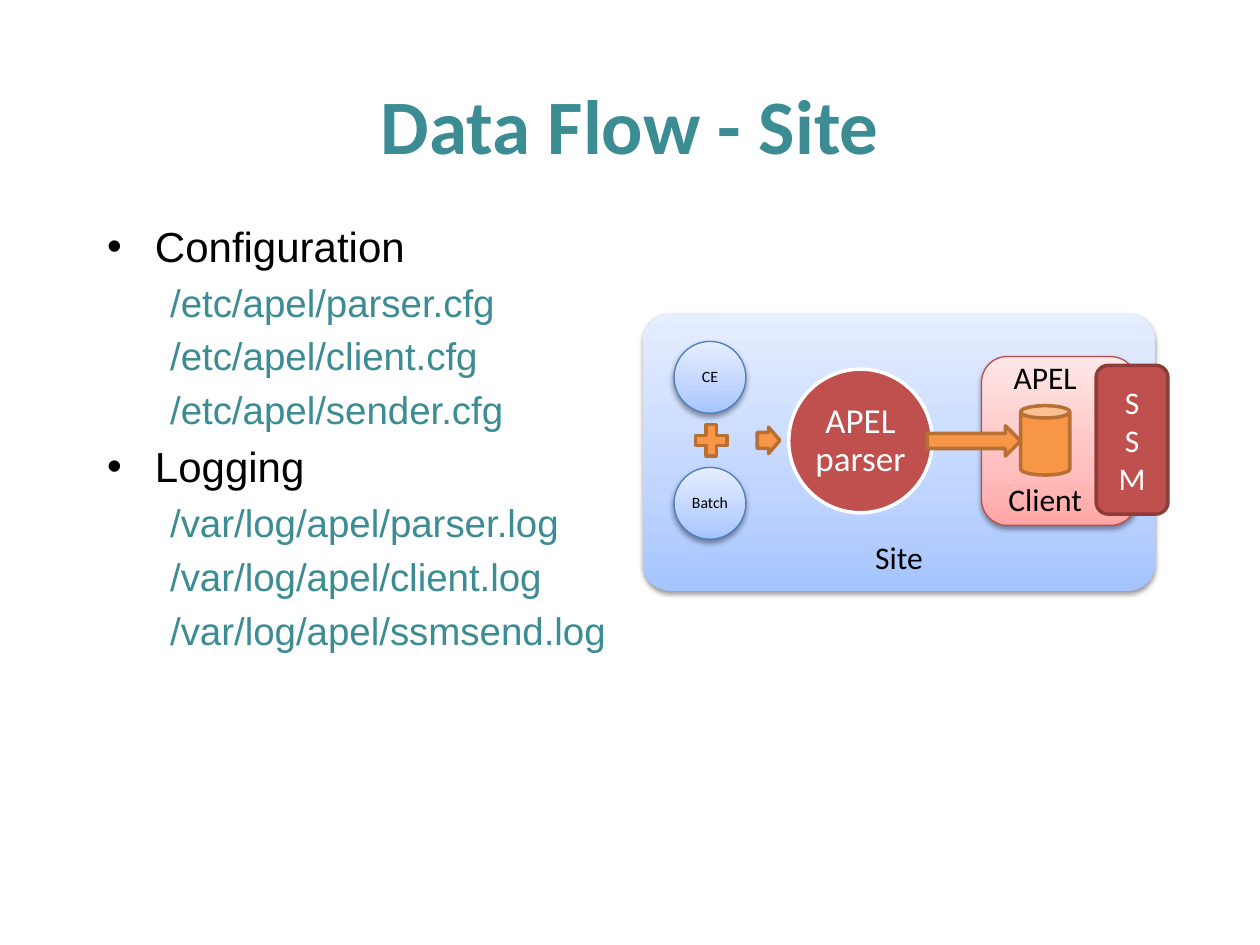
"""Build the 'Data Flow - Site' slide with its file list and site diagram."""
import pptx
import pptx.util
import pptx.dml.color
import pptx.enum.shapes
import pptx.enum.text
import pptx.oxml
import pptx.oxml.ns

Inches = pptx.util.Inches
Pt = pptx.util.Pt
Kind = pptx.enum.shapes.MSO_SHAPE
Anchor = pptx.enum.text.MSO_ANCHOR
Align = pptx.enum.text.PP_ALIGN
qn = pptx.oxml.ns.qn
NS = pptx.oxml.ns.nsdecls("a")

COLORS = {
    "teal": "3C8C93", "black": "000000", "white": "FFFFFF",
    "orange": "F79646", "rust": "B76F34", "red": "C0504D",
    "maroon": "8E3B39", "rose": "BF4C48", "blue": "4B7EBC",
}
BLENDS = {
    "sky": ("A4C4FF", "BFD4FF", "E6EEFF"),
    "pink": ("FFA6A5", "FFC0BF", "FFE7E7"),
}


def write(frame, text, size=18, color="black", font="Calibri", bold=False,
          align=Align.CENTER, anchor=Anchor.MIDDLE, inset=None, spacing=None):
    """Fill a text frame, one paragraph per line of text."""
    frame.word_wrap = True
    frame.vertical_anchor = anchor
    if inset is not None:
        frame.margin_left = frame.margin_right = Inches(inset)
        frame.margin_top = frame.margin_bottom = Inches(inset)
    frame.text = text
    for para in frame.paragraphs:
        para.alignment = align
        para.line_spacing = spacing
        for run in para.runs:
            run.font.name = font
            run.font.size = Pt(size)
            run.font.bold = bold
            run.font.color.rgb = pptx.dml.color.RGBColor.from_string(COLORS[color])


def draw(kind, box, fill, line=None, width=2, adjust=None):
    """Add a shape; a blended fill also gets a soft shadow."""
    shape = slide.shapes.add_shape(kind, *map(Inches, box))
    if adjust is not None:
        shape.adjustments[0] = adjust
    if line:
        shape.line.color.rgb = pptx.dml.color.RGBColor.from_string(COLORS[line])
        shape.line.width = Pt(width)
    else:
        shape.line.fill.background()
    shape.shadow.inherit = False
    if fill in BLENDS:
        shape.fill.gradient()
        props = shape._element.spPr
        stops = "".join(
            f'<a:gs pos="{pos}"><a:srgbClr val="{tint}"/></a:gs>'
            for pos, tint in zip((0, 35000, 100000), BLENDS[fill]))
        props.replace(props.find(qn("a:gradFill")), pptx.oxml.parse_xml(
            f'<a:gradFill {NS} rotWithShape="1"><a:gsLst>{stops}</a:gsLst>'
            '<a:lin ang="16200000" scaled="0"/></a:gradFill>'))
        props.find(qn("a:effectLst")).append(pptx.oxml.parse_xml(
            f'<a:outerShdw {NS} blurRad="{Pt(3.1)}" dist="{Pt(1.6)}" '
            'dir="5400000" rotWithShape="0"><a:srgbClr val="000000">'
            '<a:alpha val="38000"/></a:srgbClr></a:outerShdw>'))
    else:
        shape.fill.solid()
        shape.fill.fore_color.rgb = pptx.dml.color.RGBColor.from_string(COLORS[fill])
    return shape


deck = pptx.Presentation()
deck.slide_width, deck.slide_height = Inches(10), Inches(7.5)
slide = deck.slides.add_slide(deck.slide_layouts[1])
title, body = slide.placeholders

title.left, title.top, title.width, title.height = map(Inches, (0, 0.36, 10, 1.25))
write(title.text_frame, "Data Flow - Site", size=44, color="teal", bold=True)

body.left, body.top, body.width, body.height = map(Inches, (0.75, 1.7, 4.34, 4.94))
files = {
    "Configuration": ["/etc/apel/parser.cfg", "/etc/apel/client.cfg",
                      "/etc/apel/sender.cfg"],
    "Logging": ["/var/log/apel/parser.log", "/var/log/apel/client.log",
                "/var/log/apel/ssmsend.log"],
}
rows = []
for head, names in files.items():
    rows += [(head, 0)] + [(name, 1) for name in names]
frame = body.text_frame
frame.word_wrap = True
frame.auto_size = pptx.enum.text.MSO_AUTO_SIZE.NONE
for index, (text, level) in enumerate(rows):
    para = frame.paragraphs[0] if index == 0 else frame.add_paragraph()
    para.level = level
    props = para._p.get_or_add_pPr()
    props.set("marL", str(Inches((0.38, 0.5)[level])))
    props.set("indent", str(Inches((-0.38, 0)[level])))
    bullet = ('<a:buChar {} char="•"/>', "<a:buNone {}/>")[level]
    props.append(pptx.oxml.parse_xml(bullet.format(NS)))
    if index == 0:
        para.space_before = Pt(0)
    run = para.add_run()
    run.text = text
    run.font.name = "Arial"
    run.font.size = Pt((24, 22)[level])
    run.font.color.rgb = pptx.dml.color.RGBColor.from_string(
        COLORS[("black", "teal")[level]])

site = draw(Kind.ROUNDED_RECTANGLE, (5.1, 2.49, 4.07, 2.2), "sky", adjust=0.1)
write(site.text_frame, "Site", anchor=Anchor.BOTTOM, inset=0.05, spacing=0.9)

for label, top in (("CE", 2.71), ("Batch", 3.71)):
    source = draw(Kind.OVAL, (5.35, top, 0.57, 0.57), "sky", "blue", 0.75)
    write(source.text_frame, label, size=9, inset=0, spacing=0.9)

draw(Kind.CROSS, (5.52, 3.37, 0.25, 0.25), "orange", "rust", adjust=0.34)
draw(Kind.RIGHT_ARROW, (6.01, 3.39, 0.18, 0.21), "orange", "rust").adjustments[0] = 0.6

parser = draw(Kind.OVAL, (6.26, 2.93, 1.14, 1.14), "red", "white")
write(parser.text_frame, "APEL parser", size=20, color="white", inset=0, spacing=0.9)

draw(Kind.ROUNDED_RECTANGLE, (7.79, 2.83, 1.23, 1.34), "pink", "rose", 0.75)
draw(Kind.CAN, (8.1, 3.22, 0.39, 0.55), "orange", "rust")
for label, top in (("APEL", 2.79), ("Client", 3.76)):
    box = slide.shapes.add_textbox(*map(Inches, (7.85, top, 0.89, 0.4)))
    write(box.text_frame, label, anchor=Anchor.TOP)

draw(Kind.RIGHT_ARROW, (7.36, 3.38, 0.74, 0.24), "orange", "rust")
sender = draw(Kind.ROUNDED_RECTANGLE, (8.7, 2.9, 0.57, 1.18), "red", "maroon")
write(sender.text_frame, "S\nS\nM", color="white")

deck.save("out.pptx")
